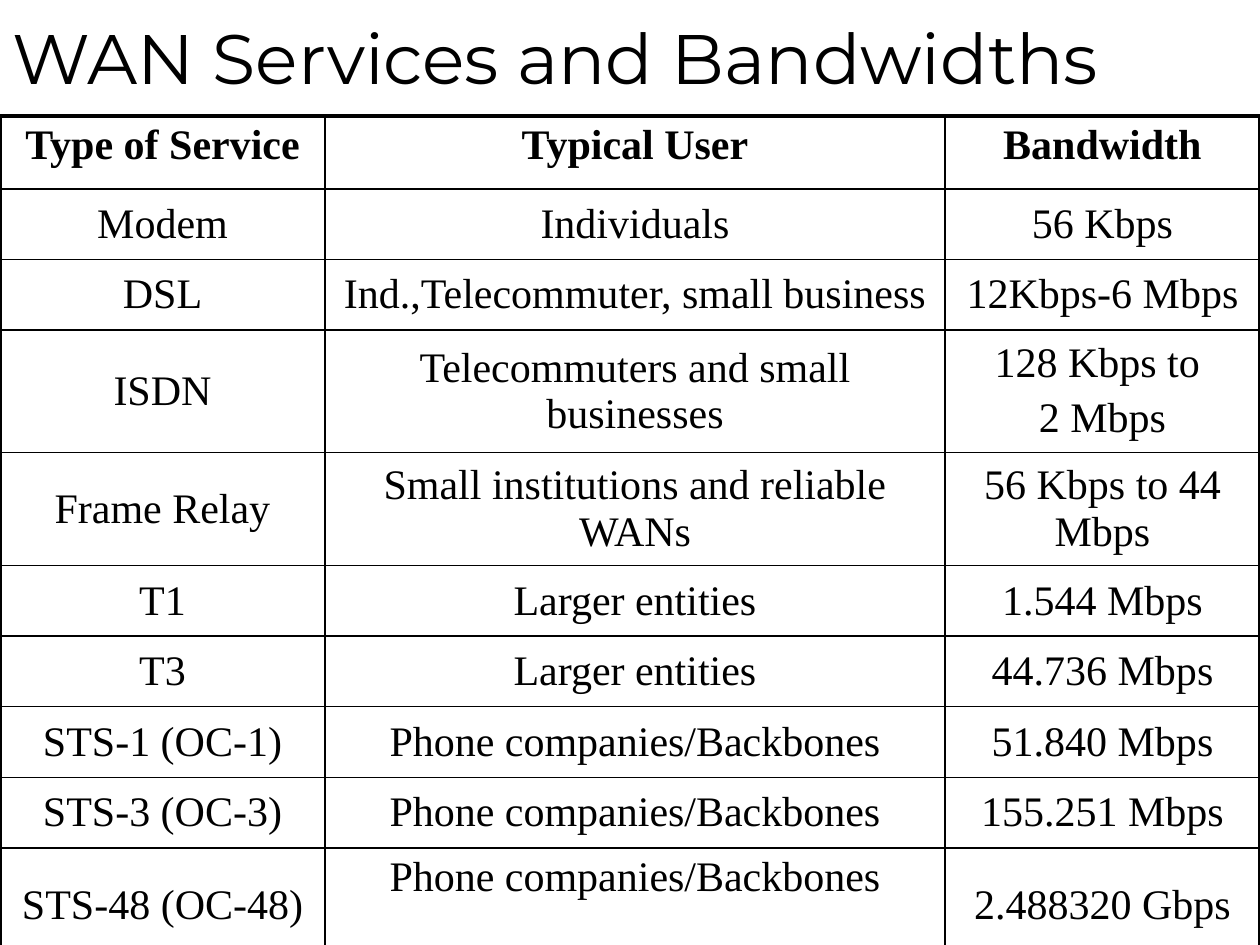
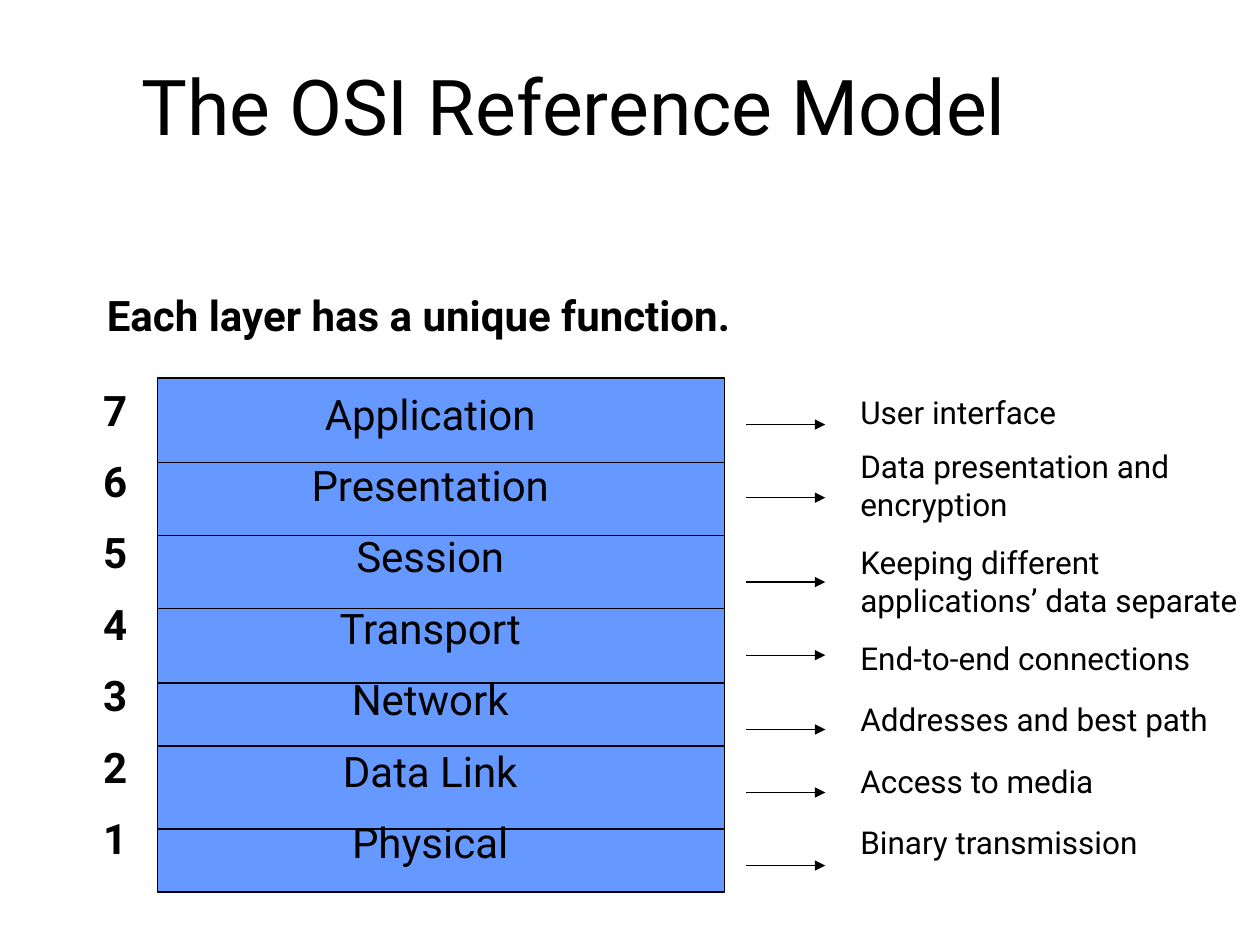
from dataclasses import dataclass

from lxml.etree import SubElement
from pptx import Presentation
from pptx.dml.color import RGBColor
from pptx.enum.shapes import MSO_CONNECTOR, MSO_SHAPE
from pptx.enum.text import MSO_ANCHOR, MSO_AUTO_SIZE, PP_ALIGN
from pptx.oxml.ns import qn
from pptx.util import Inches, Pt

# Content
WAN_TITLE = "WAN Services and Bandwidths"
WAN_ROWS = [
    ("Type of Service", "Typical User", "Bandwidth"),
    ("Modem", "Individuals", "56 Kbps"),
    ("DSL", "Ind.,Telecommuter, small business", "12Kbps-6 Mbps"),
    ("ISDN", "Telecommuters and small businesses", "128 Kbps to \n2 Mbps"),
    ("Frame Relay", "Small institutions and reliable WANs", "56 Kbps to 44 Mbps"),
    ("T1", "Larger entities", "1.544 Mbps"),
    ("T3", "Larger entities", "44.736 Mbps"),
    ("STS-1 (OC-1)", "Phone companies/Backbones", "51.840 Mbps"),
    ("STS-3 (OC-3)", "Phone companies/Backbones", "155.251 Mbps"),
    ("STS-48 (OC-48)", "Phone companies/Backbones", "2.488320 Gbps"),
]
WAN_COLUMNS = (2.58, 4.92, 2.5)
WAN_ROW_HEIGHTS = (0.58, 0.56, 0.56, 0.97, 0.9, 0.56, 0.56, 0.56, 0.56, 0.92)

OSI_TITLE = "The OSI Reference Model"
OSI_LEAD = "Each layer has a unique function."
# Each layer: name, function, space before and after the function (points), arrow height
OSI_LAYERS = [
    ("Application", "User interface", 0, 0, 3.37),
    ("Presentation", "Data presentation and encryption", 9, 4.5, 3.95),
    ("Session", "Keeping different applications’ data separate", 7.2, 7.2, 4.62),
    ("Transport", "End-to-end connections", 4.5, 0, 5.2),
    ("Network", "Addresses and best path", 13.5, 0, 5.79),
    ("Data Link", "Access to media", 13.5, 0, 6.29),
    ("Physical", "Binary transmission", 13.5, 0, 6.87),
]
LAYER_DIVIDERS = (3.67, 4.25, 4.83, 5.42, 5.92, 6.58)


@dataclass(frozen=True)
class Theme:
    ink: RGBColor = RGBColor(0, 0, 0)
    layer_fill: RGBColor = RGBColor(0x66, 0x99, 0xFF)
    font: str = "Roboto"
    wan_title_font: str = "Montserrat"
    table_font: str = "Times New Roman"
    wan_title_size: float = 40
    osi_title_size: float = 44
    body_size: float = 24
    note_size: float = 18
    thin: float = 0.75
    grid: float = 1
    frame: float = 2.25


THEME = Theme()


# Shared helpers
def set_font(paragraph, name, size, bold=False):
    font = paragraph.font
    font.name, font.size, font.bold = name, Pt(size), bold
    font.color.rgb = THEME.ink


def add_titled_page(deck, title, area, font, size):
    page = deck.slides.add_slide(deck.slide_layouts[5])
    box = page.shapes.title
    box.left, box.top, box.width, box.height = map(Inches, area)
    frame = box.text_frame
    frame.text = title
    frame.auto_size = MSO_AUTO_SIZE.NONE
    frame.vertical_anchor = MSO_ANCHOR.BOTTOM
    frame.paragraphs[0].alignment = PP_ALIGN.LEFT
    set_font(frame.paragraphs[0], font, size)
    return page


def add_text(page, lines, area, size, bold=False, align=PP_ALIGN.LEFT,
             gap=0, inset=0.05):
    box = page.shapes.add_textbox(*map(Inches, area))
    frame = box.text_frame
    frame.word_wrap = True
    frame.margin_top = frame.margin_bottom = Inches(inset)
    frame.text = "\n".join(lines)
    for index, paragraph in enumerate(frame.paragraphs):
        paragraph.alignment = align
        paragraph.space_before = Pt(gap if index else 0)
        set_font(paragraph, THEME.font, size, bold)
    return frame


def add_rule(page, left, right, height, arrow=False):
    rule = page.shapes.add_connector(
        MSO_CONNECTOR.STRAIGHT, *map(Inches, (left, height, right, height)))
    rule.line.color.rgb = THEME.ink
    rule.line.width = Pt(THEME.thin)
    properties = rule.element.spPr
    if arrow:
        SubElement(properties.find(qn("a:ln")), qn("a:tailEnd"), type="triangle")
    SubElement(properties, qn("a:effectLst"))


def set_borders(cell, widths):
    properties = cell._tc.get_or_add_tcPr()
    for side, width in zip("LRTB", widths):
        line = SubElement(properties, qn(f"a:ln{side}"), w=str(Pt(width)))
        fill = SubElement(line, qn("a:solidFill"))
        SubElement(fill, qn("a:srgbClr"), val=str(THEME.ink))


# WAN services table
def build_wan_page(deck):
    page = add_titled_page(deck, WAN_TITLE, (0, 0, 9.67, 0.83),
                           THEME.wan_title_font, THEME.wan_title_size)
    last_row, last_column = len(WAN_ROWS) - 1, len(WAN_COLUMNS) - 1
    table = page.shapes.add_table(
        len(WAN_ROWS), len(WAN_COLUMNS), 0, Inches(0.92),
        Inches(sum(WAN_COLUMNS)), Inches(sum(WAN_ROW_HEIGHTS))).table
    table.first_row = table.horz_banding = False
    for column, width in zip(table.columns, WAN_COLUMNS):
        column.width = Inches(width)
    for row, height in zip(table.rows, WAN_ROW_HEIGHTS):
        row.height = Inches(height)

    for row, texts in enumerate(WAN_ROWS):
        for column, text in enumerate(texts):
            cell = table.cell(row, column)
            outer = (column == 0, column == last_column, row == 0, row == last_row)
            set_borders(cell, [THEME.frame if edge else THEME.grid for edge in outer])
            cell.fill.background()
            at_top = row == 0 or (row, column) == (last_row, 1)
            cell.vertical_anchor = MSO_ANCHOR.TOP if at_top else MSO_ANCHOR.MIDDLE
            cell.text_frame.text = text
            for index, paragraph in enumerate(cell.text_frame.paragraphs):
                paragraph.alignment = PP_ALIGN.CENTER
                paragraph.space_before = Pt(4.8 if index else 0)
                set_font(paragraph, THEME.table_font, THEME.body_size, row == 0)


# OSI layer stack
def build_osi_page(deck):
    page = add_titled_page(deck, OSI_TITLE, (1.02, 0, 8.52, 1.25),
                           THEME.font, THEME.osi_title_size)
    names, functions, befores, afters, arrow_heights = zip(*OSI_LAYERS)

    # Functions and the arrows to them
    for height in arrow_heights:
        add_rule(page, 5.92, 6.55, height, arrow=True)
    notes = add_text(page, functions, (6.73, 2.92, 3.27, 4.32),
                     THEME.note_size, inset=0.2)
    for paragraph, before, after in zip(notes.paragraphs, befores, afters):
        paragraph.space_before, paragraph.space_after = Pt(before), Pt(after)

    add_text(page, [OSI_LEAD], (0.75, 2.25, 6.83, 0.5), THEME.body_size, bold=True)

    # Stack, layer names and numbers
    stack = page.shapes.add_shape(MSO_SHAPE.RECTANGLE,
                                  *map(Inches, (1.25, 3, 4.5, 4.08)))
    stack.shadow.inherit = False
    stack.fill.solid()
    stack.fill.fore_color.rgb = THEME.layer_fill
    stack.line.color.rgb = THEME.ink
    stack.line.width = Pt(THEME.thin)
    add_text(page, names, (1.08, 3.08, 4.67, 3.99), THEME.body_size,
             align=PP_ALIGN.CENTER, gap=12, inset=0)
    for height in LAYER_DIVIDERS:
        add_rule(page, 1.25, 5.75, height)
    numbers = [str(number) for number in range(len(names), 0, -1)]
    add_text(page, numbers, (0.58, 3, 0.67, 4.09), THEME.body_size, bold=True,
             align=PP_ALIGN.CENTER, gap=12)


def main():
    deck = Presentation()
    deck.slide_width, deck.slide_height = Inches(10), Inches(7.5)
    build_wan_page(deck)
    build_osi_page(deck)
    deck.save("out.pptx")


if __name__ == "__main__":
    main()
